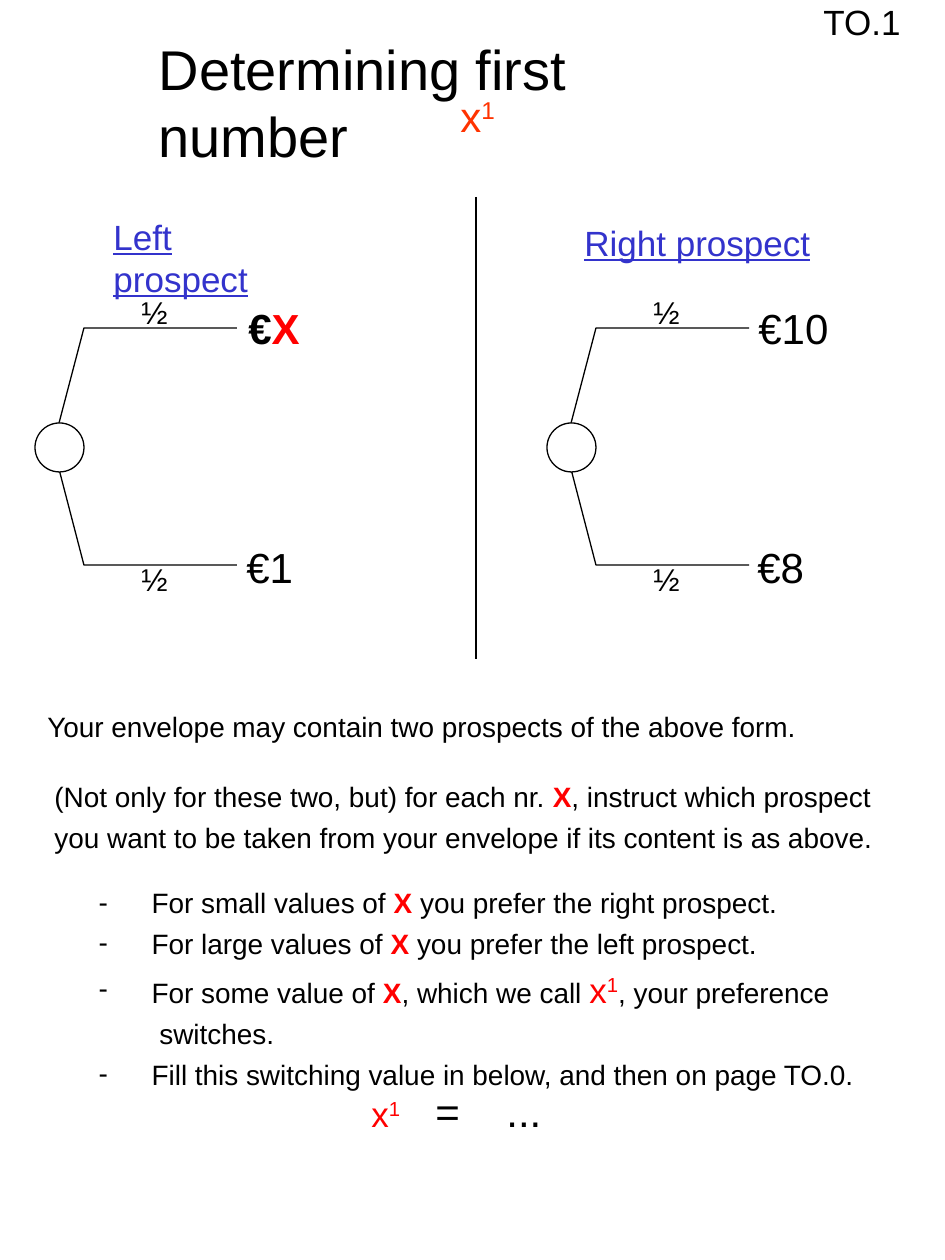
from lxml.etree import SubElement
from pptx import Presentation
from pptx.dml.color import RGBColor
from pptx.enum.shapes import MSO_CONNECTOR, MSO_SHAPE
from pptx.enum.text import MSO_ANCHOR, MSO_AUTO_SIZE, PP_ALIGN
from pptx.oxml.ns import qn
from pptx.util import Emu, Pt

EMU_PER_PX = 914400 / 126
COLORS = {"ink": "000000", "paper": "FFFFFF", "red": "FF0000",
          "orange": "FF3300", "blue": "3333CC"}
X = ("X", {"bold": True, "color": "red"})
CIRCLE = 49
BRANCH_TOP, BRANCH_BOTTOM = 328, 565
RIGHT_SHIFT = 512


def px(length):
    return Emu(round(length * EMU_PER_PX))


def rgb(name):
    return RGBColor.from_string(COLORS[name])


def first_number(color, size):
    """Runs for x with a raised 1."""
    return [("x", {"color": color, "size": size}),
            ("1", {"color": color, "size": size, "raised": True})]


class SlideBuilder:
    font_name = "Arial"
    line_width = Pt(0.75)

    def __init__(self, slide):
        self.slide = slide
        self.shapes = slide.shapes

    def fill_text(self, holder, box, paragraphs, size, wrap=True, spacing=1.0):
        """Each paragraph is a list of (text, format values) runs."""
        holder.left, holder.top, holder.width, holder.height = map(px, box)
        frame = holder.text_frame
        frame_format = {"word_wrap": wrap, "vertical_anchor": MSO_ANCHOR.TOP,
                        "auto_size": MSO_AUTO_SIZE.SHAPE_TO_FIT_TEXT}
        for key, value in frame_format.items():
            setattr(frame, key, value)
        paragraph_format = {"alignment": PP_ALIGN.LEFT, "line_spacing": spacing,
                            "space_before": Pt(0), "space_after": Pt(0)}
        for index, runs in enumerate(paragraphs):
            paragraph = frame.paragraphs[0] if index == 0 else frame.add_paragraph()
            for key, value in paragraph_format.items():
                setattr(paragraph, key, value)
            for text, style in runs:
                self.add_run(paragraph, text, {"size": size, **style})
        return frame

    def add_run(self, paragraph, text, style):
        lines = text.split("\n")
        for index, line in enumerate(lines):
            if index:
                paragraph.add_line_break()
            run = paragraph.add_run()
            run.text = line
            values = {"name": self.font_name, **style}
            values["size"] = Pt(values["size"])
            run.font.color.rgb = rgb(values.pop("color", "ink"))
            if values.pop("raised", False):
                run._r.get_or_add_rPr().set("baseline", "30000")
            for key, value in values.items():
                setattr(run.font, key, value)

    def text(self, box, runs, size, **options):
        holder = self.shapes.add_textbox(0, 0, 0, 0)
        return self.fill_text(holder, box, [runs], size, **options)

    def title(self, box, text, size):
        self.fill_text(self.shapes.title, box, [[(text, {})]], size)

    def dash_list(self, box, items, size, indent, spacing):
        body = self.slide.placeholders[1]
        frame = self.fill_text(body, box, items, size, spacing=spacing)
        for paragraph in frame.paragraphs:
            properties = paragraph._p.get_or_add_pPr()
            properties.set("marL", str(px(indent)))
            properties.set("indent", str(-px(indent)))
            SubElement(properties, qn("a:buChar"), char="-")

    def tab_stops(self, frame, stops):
        properties = frame.paragraphs[0]._p.get_or_add_pPr()
        tabs = SubElement(properties, qn("a:tabLst"))
        for stop in stops:
            SubElement(tabs, qn("a:tab"), pos=str(px(stop)), algn="l")

    def outline(self, shape):
        shape.line.color.rgb = rgb("ink")
        shape.line.width = self.line_width

    def divider(self, x, top, bottom):
        line = self.shapes.add_connector(
            MSO_CONNECTOR.STRAIGHT, px(x), px(top), px(x), px(bottom))
        self.outline(line)
        SubElement(line._element.spPr, qn("a:effectLst"))

    def branch(self, points):
        builder = self.shapes.build_freeform(*points[0], scale=EMU_PER_PX)
        builder.add_line_segments(points[1:], close=False)
        shape = builder.convert_to_shape()
        shape.shadow.inherit = False
        shape.fill.background()
        self.outline(shape)

    def prospect(self, left):
        """Chance node with two equally likely branches."""
        middle = (BRANCH_TOP + BRANCH_BOTTOM) // 2
        for end, label_top in ((BRANCH_TOP, 287), (BRANCH_BOTTOM, 554)):
            self.branch([(left + 18, middle), (left + 49, end), (left + 202, end)])
            self.text((left + 94, label_top, 52, 50), [("½", {})], 18, wrap=False)
        node = self.shapes.add_shape(
            MSO_SHAPE.OVAL, px(left), px(middle + 1 - CIRCLE // 2),
            px(CIRCLE), px(CIRCLE))
        node.shadow.inherit = False
        node.fill.solid()
        node.fill.fore_color.rgb = rgb("paper")
        self.outline(node)


def main():
    deck = Presentation()
    deck.slide_width, deck.slide_height = px(945), px(1260)
    page = SlideBuilder(deck.slides.add_slide(deck.slide_layouts[1]))

    page.title((146, 28, 630, 79), "Determining first number", 32)
    page.text((448, 84, 62, 63), first_number("orange", 24), 24, wrap=False)
    page.text((811, -6, 103, 54), [("TO.1", {})], 20, wrap=False)

    for left in (35, 35 + RIGHT_SHIFT):
        page.prospect(left)
    page.divider(476, 197, 659)

    heading = {"color": "blue", "underline": True}
    page.text((101, 209, 220, 54), [("Left prospect", heading)], 20)
    page.text((572, 215, 251, 54), [("Right prospect", heading)], 20, wrap=False)

    bold = {"bold": True}
    outcomes = [((236, 296, 77, 63), [("€", bold), X]),
                ((234, 535, 72, 63), [("€1", {})]),
                ((746, 296, 96, 63), [("€10", {})]),
                ((745, 535, 72, 63), [("€8", {})])]
    for box, amount in outcomes:
        page.text(box, amount, 24, wrap=False)

    page.text((35, 697, 779, 53),
              [("Your envelope may contain two prospects of the above form.", {})],
              16, wrap=False, spacing=1.2)
    page.text((42, 767, 862, 93),
              [("(Not only for these two, but) for each nr. ", {}), X,
               (", instruct which prospect you want to be taken from your "
                "envelope if its content is as above.", {})], 16, spacing=1.2)
    page.dash_list((86, 873, 813, 224), [
        [("For small values of ", {}), X, (" you prefer the right prospect.", {})],
        [("For large values of ", {}), X, (" you prefer the left prospect.", {})],
        [("For some value of ", {}), X, (", which we call ", {}),
         *first_number("red", 20), (", your preference\n switches.", {})],
        [("Fill this switching value in below, and then on page TO.0.", {})],
    ], size=16, indent=53, spacing=1.2)

    answer = page.text((359, 1079, 197, 63),
                       [*first_number("red", 20), ("\t=\t...", {})], 24, wrap=False)
    page.tab_stops(answer, (64, 135))

    deck.save("out.pptx")


if __name__ == "__main__":
    main()
